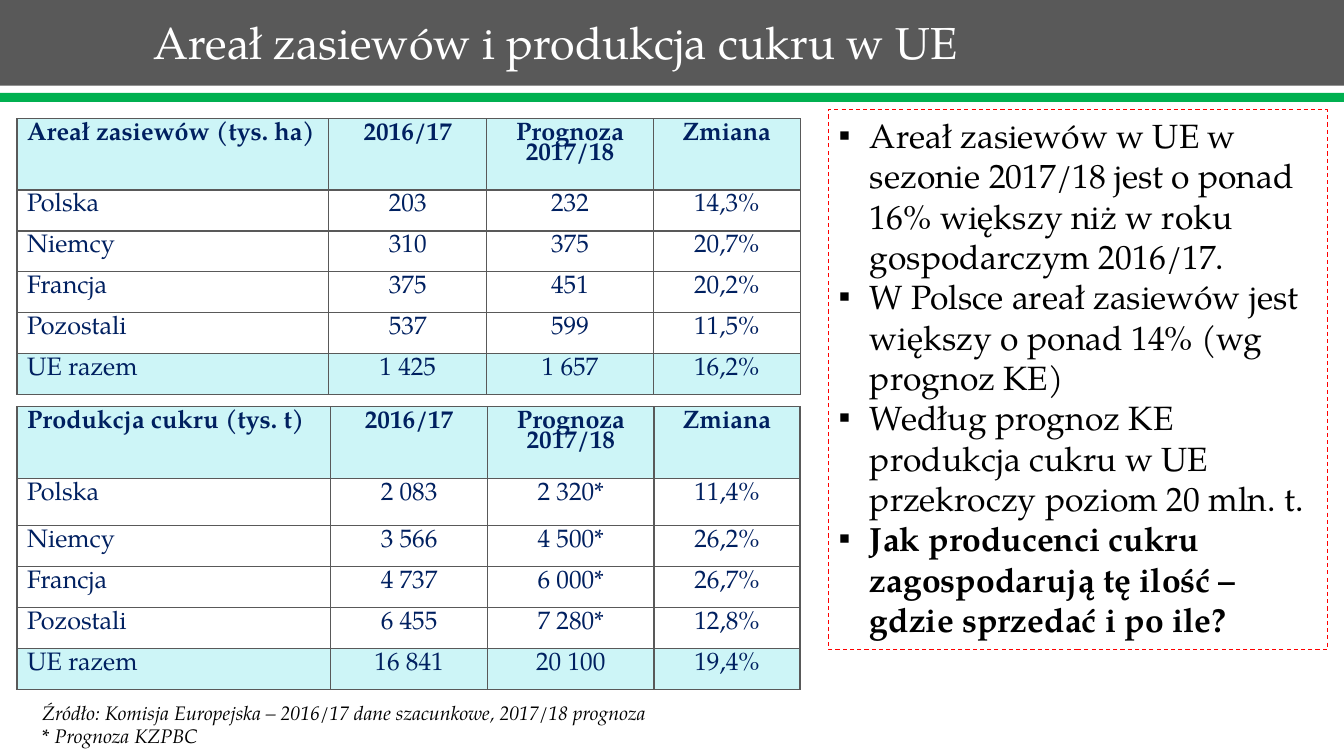
"""Build a slide on sugar beet area and sugar production in the EU."""
from lxml import etree
from pptx import Presentation
from pptx.dml.color import RGBColor
from pptx.enum.dml import MSO_LINE
from pptx.enum.shapes import MSO_SHAPE
from pptx.enum.text import MSO_ANCHOR, MSO_AUTO_SIZE, PP_ALIGN
from pptx.oxml.ns import qn
from pptx.util import Cm, Pt

RECTANGLE = MSO_SHAPE.RECTANGLE
DASH = MSO_LINE.DASH
LEFT, CENTER = PP_ALIGN.LEFT, PP_ALIGN.CENTER
TOP, BOTTOM = MSO_ANCHOR.TOP, MSO_ANCHOR.BOTTOM
NO_AUTOFIT = MSO_AUTO_SIZE.NONE

FONT = "TeX Gyre Pagella"
COLORS = {
    "white": "FFFFFF", "black": "000000", "gray": "595959", "green": "00B050",
    "red": "FF0000", "navy": "002060", "aqua": "CDF5F7",
}

TITLE = "Areał zasiewów i produkcja cukru w UE"
CONCLUSIONS = [
    "Areał zasiewów w UE w sezonie 2017/18 jest o ponad 16% większy niż w roku gospodarczym 2016/17.",
    "W Polsce areał zasiewów jest większy o ponad 14% (wg prognoz KE)",
    "Według prognoz KE produkcja cukru w UE przekroczy poziom 20 mln. t.",
    "Jak producenci cukru zagospodarują tę ilość – gdzie sprzedać i po ile?",
]
SOURCE_NOTE = (
    "Źródło: Komisja Europejska – 2016/17 dane szacunkowe, 2017/18 prognoza\n"
    "* Prognoza KZPBC"
)
SEASONS = ["2016/17", "Prognoza\n2017/18", "Zmiana"]
TABLES = [
    {
        "top": 2.99,
        "columns": [7.85, 3.99, 4.19, 3.71],
        "heights": [1.8] + [1.03] * 5,
        "rows": [
            ["Areał zasiewów (tys. ha)", *SEASONS],
            ["Polska", "203", "232", "14,3%"],
            ["Niemcy", "310", "375", "20,7%"],
            ["Francja", "375", "451", "20,2%"],
            ["Pozostali", "537", "599", "11,5%"],
            ["UE razem", "1 425", "1 657", "16,2%"],
        ],
    },
    {
        "top": 10.25,
        "columns": [7.9, 3.96, 4.19, 3.68],
        "heights": [1.8, 1.2] + [1.03] * 4,
        "rows": [
            ["Produkcja cukru (tys. t)", *SEASONS],
            ["Polska", "2 083", "2 320*", "11,4%"],
            ["Niemcy", "3 566", "4 500*", "26,2%"],
            ["Francja", "4 737", "6 000*", "26,7%"],
            ["Pozostali", "6 455", "7 280*", "12,8%"],
            ["UE razem", "16 841", "20 100", "19,4%"],
        ],
    },
]
BANDS = [(0, 2.16, "gray"), (2.34, 0.23, "green")]


def color(name):
    return RGBColor.from_string(COLORS[name])


def place(shape, left, top, width, height):
    shape.left, shape.top = Cm(left), Cm(top)
    shape.width, shape.height = Cm(width), Cm(height)


def format_text(text_frame, size, color_name, align=LEFT, spacing=1.0, bold=False, italic=False):
    for paragraph in text_frame.paragraphs:
        paragraph.alignment = align
        paragraph.line_spacing = spacing
        paragraph.space_before = Pt(0)
        for run in paragraph.runs:
            run.font.name, run.font.size = FONT, Pt(size)
            run.font.color.rgb = color(color_name)
            run.font.bold, run.font.italic = bold, italic


def add_bullet(paragraph):
    properties = paragraph._p.get_or_add_pPr()
    properties.set("marL", str(Cm(0.79)))
    properties.set("indent", str(-Cm(0.79)))
    etree.SubElement(properties, qn("a:buFont"), typeface="Arial")
    etree.SubElement(properties, qn("a:buChar"), char="▪")


def add_borders(cell):
    properties = cell._tc.get_or_add_tcPr()
    for position, side in enumerate(("a:lnL", "a:lnR", "a:lnT", "a:lnB")):
        line = etree.Element(qn(side), w=str(Pt(1)))
        fill = etree.SubElement(line, qn("a:solidFill"))
        etree.SubElement(fill, qn("a:srgbClr"), val=COLORS["gray"])
        properties.insert(position, line)


def add_bands(slide):
    for top, height, color_name in BANDS:
        band = slide.shapes.add_shape(RECTANGLE, 0, Cm(top), Cm(33.87), Cm(height))
        band.shadow.inherit = False
        band.fill.solid()
        band.fill.fore_color.rgb = color(color_name)
        band.line.fill.background()
        slide.shapes.title.element.addprevious(band.element)


def fill_title(title):
    place(title, 3.61, -0.99, 26.67, 2.87)
    title.text_frame.text = TITLE
    title.text_frame.vertical_anchor = BOTTOM
    title.text_frame.auto_size = NO_AUTOFIT
    format_text(title.text_frame, 32, "white", spacing=0.9)


def fill_conclusions(body):
    place(body, 20.88, 2.77, 12.57, 13.59)
    body.line.color.rgb = color("red")
    body.line.width = Pt(0.75)
    body.line.dash_style = DASH
    text_frame = body.text_frame
    text_frame.text = "\n".join(CONCLUSIONS)
    text_frame.vertical_anchor = TOP
    text_frame.auto_size = NO_AUTOFIT
    format_text(text_frame, 24, "black")
    for paragraph in text_frame.paragraphs:
        add_bullet(paragraph)
    text_frame.paragraphs[-1].runs[0].font.bold = True


def add_data_table(slide, data):
    rows, columns, heights = data["rows"], data["columns"], data["heights"]
    table = slide.shapes.add_table(
        len(rows), len(columns), Cm(0.43), Cm(data["top"]), Cm(sum(columns)), Cm(sum(heights))
    ).table
    table.first_row = table.horz_banding = False
    for column, width in zip(table.columns, columns):
        column.width = Cm(width)
    for row, height in zip(table.rows, heights):
        row.height = Cm(height)
    for row_index, values in enumerate(rows):
        for column_index, value in enumerate(values):
            cell = table.cell(row_index, column_index)
            cell.text_frame.text = value
            align = CENTER if column_index else LEFT
            format_text(cell.text_frame, 18, "navy", align, 0.83, bold=row_index == 0)
            if row_index in (0, len(rows) - 1):
                cell.fill.solid()
                cell.fill.fore_color.rgb = color("aqua")
            else:
                cell.fill.background()
            add_borders(cell)


def add_source_note(slide):
    note = slide.shapes.add_textbox(Cm(0.81), Cm(17.53), Cm(15.77), Cm(1.45))
    note.text_frame.word_wrap = True
    note.text_frame.text = SOURCE_NOTE
    format_text(note.text_frame, 14, "black", italic=True)


def main():
    presentation = Presentation()
    presentation.slide_width, presentation.slide_height = Cm(33.87), Cm(19.05)
    slide = presentation.slides.add_slide(presentation.slide_layouts[1])
    add_bands(slide)
    fill_title(slide.shapes.title)
    fill_conclusions(slide.placeholders[1])
    for data in TABLES:
        add_data_table(slide, data)
    add_source_note(slide)
    presentation.save("out.pptx")


if __name__ == "__main__":
    main()
